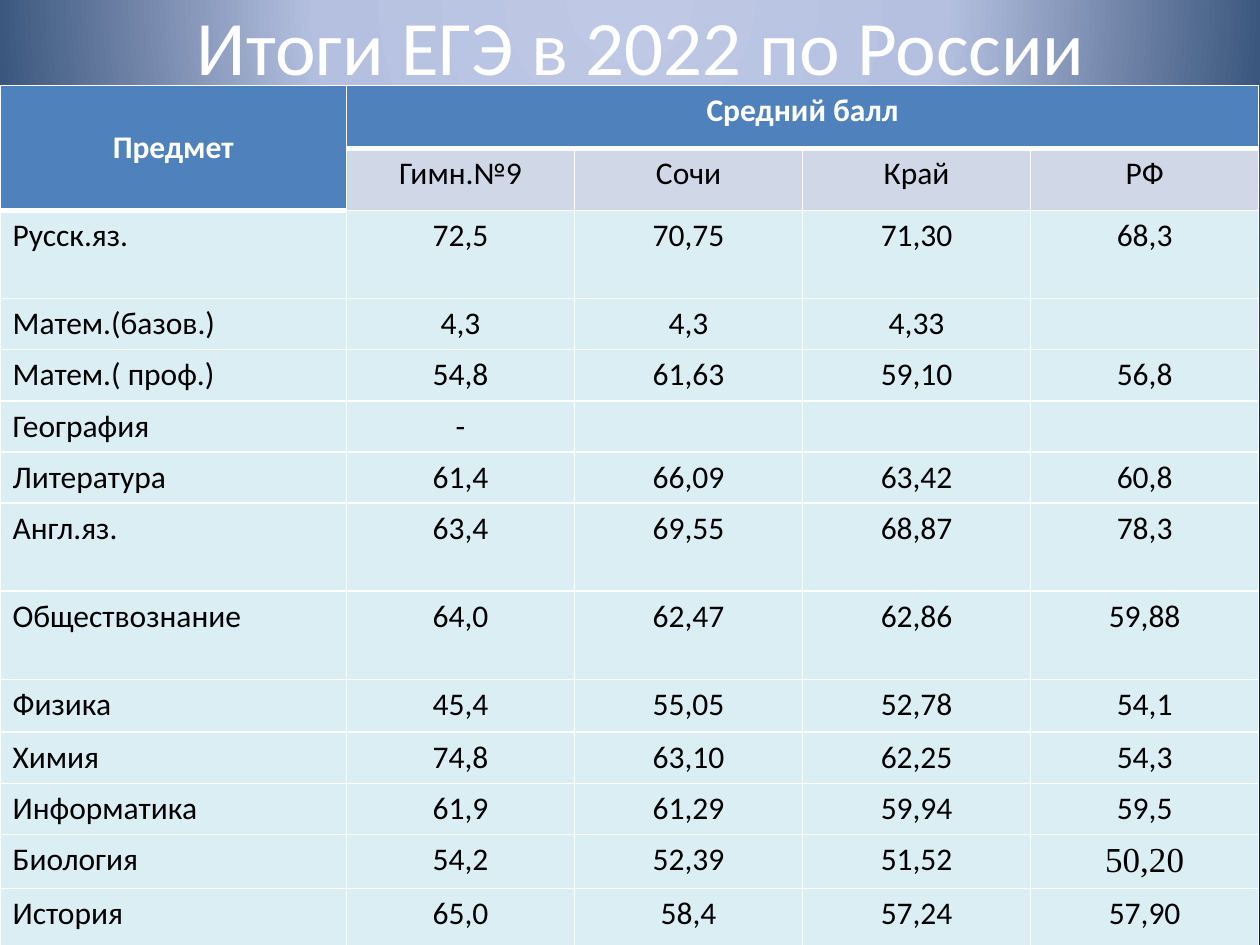
from dataclasses import dataclass

from pptx import Presentation
from pptx.dml.color import RGBColor
from pptx.enum import text
from pptx.oxml import parse_xml
from pptx.oxml import ns
from pptx.util import Inches, Pt


@dataclass(frozen=True)
class Theme:
    font: str = "Calibri"
    serif: str = "Times New Roman"
    title_size: int = 44
    body_size: int = 18
    serif_size: int = 20
    thin: int = 1
    thick: int = 3
    white: str = "FFFFFF"
    black: str = "000000"
    header: str = "4F81BD"
    subheader: str = "D0D8E8"
    body: str = "DBEEF4"
    backdrop: tuple = ((0, "BFC9E5"), (40, "B5C0E0"), (100, "00234D"))


TITLE = "Итоги ЕГЭ в 2022 по России"
COLUMN_WIDTHS = [2.75] + [1.81] * 4
ROW_HEIGHTS = [0.5, 0.49, 0.7, 0.4, 0.4, 0.4, 0.4, 0.7, 0.7, 0.42, 0.4, 0.4, 0.43, 0.46]
SCORES = [
    ["Предмет", "Средний балл", "", "", ""],
    ["", "Гимн.№9", "Сочи", "Край", "РФ"],
    ["Русск.яз.", "72,5", "70,75", "71,30", "68,3"],
    ["Матем.(базов.)", "4,3", "4,3", "4,33", ""],
    ["Матем.( проф.)", "54,8", "61,63", "59,10", "56,8"],
    ["География", "-", "", "", ""],
    ["Литература", "61,4", "66,09", "63,42", "60,8"],
    ["Англ.яз.", "63,4", "69,55", "68,87", "78,3"],
    ["Обществознание", "64,0", "62,47", "62,86", "59,88"],
    ["Физика", "45,4", "55,05", "52,78", "54,1"],
    ["Химия", "74,8", "63,10", "62,25", "54,3"],
    ["Информатика", "61,9", "61,29", "59,94", "59,5"],
    ["Биология", "54,2", "52,39", "51,52", "50,20"],
    ["История", "65,0", "58,4", "57,24", "57,90"],
]
SERIF_SCORE = (12, 4)


class SlideBuilder:
    def __init__(self, page, theme):
        self.page = page
        self.theme = theme

    def background(self):
        self.page.background.fill.solid()
        stops = "".join(
            f'<a:gs pos="{position * 1000}"><a:srgbClr val="{color}"/></a:gs>'
            for position, color in self.theme.backdrop
        )
        gradient = parse_xml(
            f'<a:gradFill {ns.nsdecls("a")} rotWithShape="1"><a:gsLst>{stops}</a:gsLst>'
            '<a:path path="circle">'
            '<a:fillToRect l="50000" t="-80000" r="50000" b="180000"/>'
            "</a:path></a:gradFill>"
        )
        properties = self.page.element.find(".//" + ns.qn("p:bgPr"))
        properties.replace(properties[0], gradient)

    def add_words(self, para, words, size, color, font=None, bold=False, centred=True):
        para.alignment = text.PP_ALIGN.CENTER if centred else text.PP_ALIGN.LEFT
        if not words:
            return
        span = para.add_run()
        span.text = words
        span.font.name = font or self.theme.font
        span.font.size = Pt(size)
        span.font.bold = bold
        span.font.color.rgb = RGBColor.from_string(color)

    def title(self, words, left, top, width, height):
        box = self.page.shapes.title
        box.left, box.top = Inches(left), Inches(top)
        box.width, box.height = Inches(width), Inches(height)
        box.text_frame.vertical_anchor = text.MSO_ANCHOR.MIDDLE
        para = box.text_frame.paragraphs[0]
        self.add_words(para, words, self.theme.title_size, self.theme.white)

    def border(self, cell, edge, width):
        cell._tc.get_or_add_tcPr().append(parse_xml(
            f'<a:ln{edge} {ns.nsdecls("a")} w="{Pt(width)}"><a:solidFill>'
            f'<a:srgbClr val="{self.theme.white}"/></a:solidFill></a:ln{edge}>'
        ))

    def cell(self, cell, words, row, column):
        theme = self.theme
        header_depth = 2 if column == 0 else 1
        is_header = row < header_depth
        self.border(cell, "L", theme.thin)
        self.border(cell, "R", theme.thin)
        self.border(cell, "T", theme.thick if row == header_depth else theme.thin)
        self.border(cell, "B", theme.thick if is_header else theme.thin)
        fill = theme.header if is_header else theme.subheader if row == 1 else theme.body
        cell.fill.solid()
        cell.fill.fore_color.rgb = RGBColor.from_string(fill)
        if is_header and column == 0:
            cell.vertical_anchor = text.MSO_ANCHOR.MIDDLE
        serif = (row, column) == SERIF_SCORE
        self.add_words(
            cell.text_frame.paragraphs[0],
            words,
            theme.serif_size if serif else theme.body_size,
            theme.white if is_header else theme.black,
            font=theme.serif if serif else theme.font,
            bold=is_header,
            centred=is_header or column > 0,
        )

    def table(self, rows, left, top, widths, heights):
        frame = self.page.shapes.add_table(
            len(rows), len(widths), Inches(left), Inches(top),
            Inches(sum(widths)), Inches(sum(heights)),
        )
        grid = frame.table
        grid.first_row = grid.horz_banding = False
        for column, width in zip(grid.columns, widths):
            column.width = Inches(width)
        for row, height in zip(grid.rows, heights):
            row.height = Inches(height)
        grid.cell(0, 0).merge(grid.cell(1, 0))
        grid.cell(0, 1).merge(grid.cell(0, len(widths) - 1))
        for row, values in enumerate(rows):
            for column, words in enumerate(values):
                self.cell(grid.cell(row, column), words, row, column)


def main():
    deck = Presentation()
    deck.slide_width, deck.slide_height = Inches(10), Inches(7.5)
    page = deck.slides.add_slide(deck.slide_layouts[5])
    builder = SlideBuilder(page, Theme())
    builder.background()
    builder.title(TITLE, 0.59, -0.27, 9, 1.25)
    builder.table(SCORES, 0, 0.68, COLUMN_WIDTHS, ROW_HEIGHTS)
    deck.save("out.pptx")


if __name__ == "__main__":
    main()
